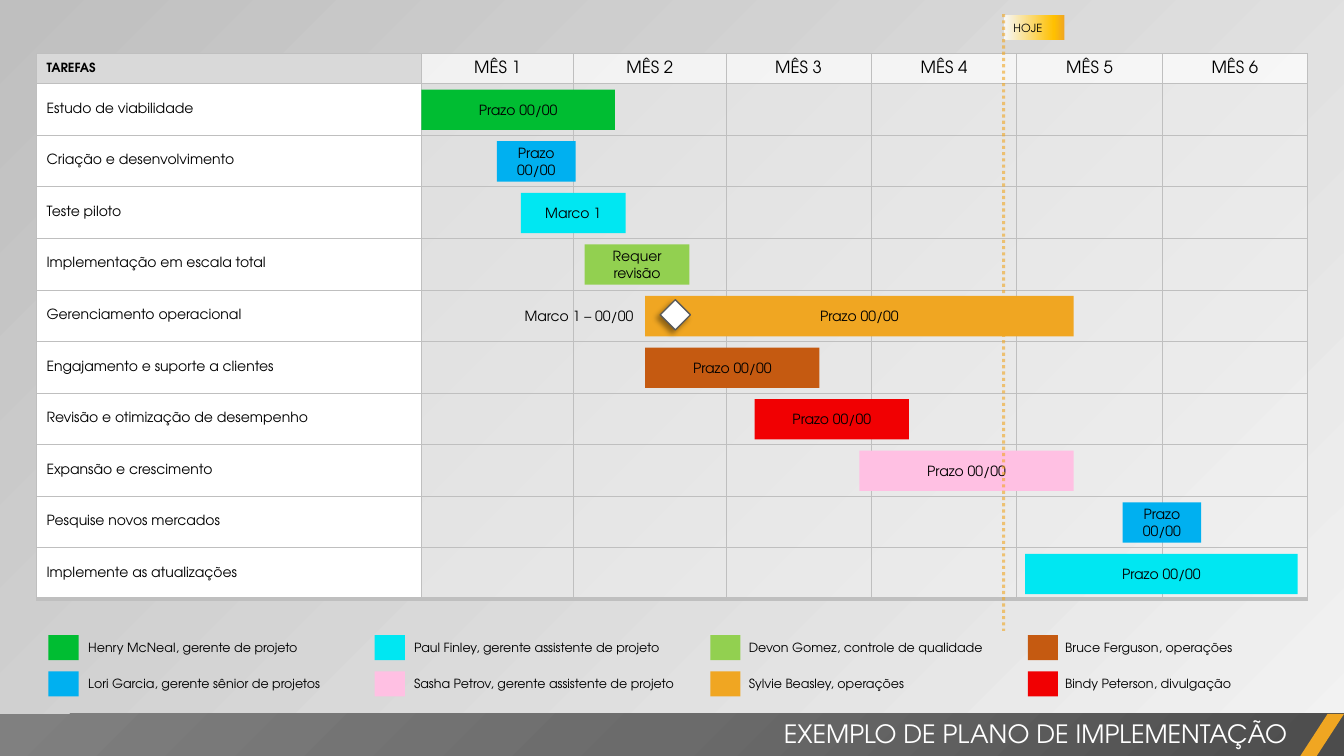
from dataclasses import dataclass

from lxml import etree
from pptx import Presentation, oxml, util as u
from pptx.dml.color import RGBColor
from pptx.enum import dml, shapes, text
from pptx.oxml import ns

COLORS = {
    "black": "000000", "white": "FFFFFF", "border": "BFBFBF", "header": "D9D9D9",
    "cell": "F2F2F2", "outline": "595959", "green": "00BD32", "blue": "00B0F0",
    "cyan": "00E7F2", "lime": "92D050", "amber": "F0A622", "brown": "C55A11",
    "red": "F10002", "pink": "FFC0E3", "gold": "FFC000", "pale": "F6F8FC",
    "dark": "4C4C4C", "middle": "6B6B6B", "light": "808080",
}
FONT = "TeX Gyre Adventor"
GRID_COLUMNS, GRID_ROWS = 80, 45
TABLE_LEFT, TABLE_TOP = 2.17, 3.18
TABLE_COLUMNS = [22.92, 9.06, 9.06] + [8.66] * 4
HEADER_HEIGHT, TASK_HEIGHT = 1.62, 3.07
FIRST_BAR_TOP, BAR_HEIGHT = 5.34, 2.4
LEGEND_TOP, LEGEND_PITCH, LEGEND_HEIGHT = 37.8, 2.16, 1.5
TODAY = 59.74
MIDDLE = text.MSO_ANCHOR.MIDDLE
LEFT, CENTER, RIGHT = text.PP_ALIGN.LEFT, text.PP_ALIGN.CENTER, text.PP_ALIGN.RIGHT
KIND = shapes.MSO_SHAPE

presentation = Presentation()
presentation.slide_width, presentation.slide_height = u.Inches(13.333), u.Inches(7.5)
slide = presentation.slides.add_slide(presentation.slide_layouts[6])


@dataclass
class Task:
    name: str
    start: float
    span: float
    label: str
    color: str


@dataclass
class LegendColumn:
    swatch: float
    label: float
    width: float
    people: list[tuple[str, str]]


TASKS = [
    Task("Estudo de viabilidade", 25.08, 11.52, "Prazo 00/00", "green"),
    Task("Criação e desenvolvimento", 29.58, 4.68, "Prazo 00/00", "blue"),
    Task("Teste piloto", 31, 6.24, "Marco 1", "cyan"),
    Task("Implementação em escala total", 34.8, 6.24, "Requer revisão", "lime"),
    Task("Gerenciamento operacional", 38.4, 25.5, "Prazo 00/00", "amber"),
    Task("Engajamento e suporte a clientes", 38.4, 10.38, "Prazo 00/00", "brown"),
    Task("Revisão e otimização de desempenho", 44.92, 9.18, "Prazo 00/00", "red"),
    Task("Expansão e crescimento", 51.15, 12.76, "Prazo 00/00", "pink"),
    Task("Pesquise novos mercados", 66.82, 4.68, "Prazo 00/00", "blue"),
    Task("Implemente as atualizações", 61.02, 16.22, "Prazo 00/00", "cyan"),
]
LEGEND = [
    LegendColumn(2.88, 4.66, 16.1, [("Henry McNeal, gerente de projeto", "green"),
                                    ("Lori Garcia, gerente sênior de projetos", "blue")]),
    LegendColumn(22.3, 24.06, 17.5, [("Paul Finley, gerente assistente de projeto", "cyan"),
                                     ("Sasha Petrov, gerente assistente de projeto", "pink")]),
    LegendColumn(42.28, 43.98, 16.9, [("Devon Gomez, controle de qualidade", "lime"),
                                      ("Sylvie Beasley, operações", "amber")]),
    LegendColumn(61.18, 62.82, 14.4, [("Bruce Ferguson, operações", "brown"),
                                      ("Bindy Peterson, divulgação", "red")]),
]


def across(columns: float) -> int:
    return round(presentation.slide_width * columns / GRID_COLUMNS)


def down(rows: float) -> int:
    return round(presentation.slide_height * rows / GRID_ROWS)


def box(left: float, top: float, width: float, height: float) -> tuple[int, int, int, int]:
    return across(left), down(top), across(width), down(height)


def rgb(color: str) -> RGBColor:
    return RGBColor.from_string(COLORS[color])


def set_opacity(parent, percent: int) -> None:
    color = next(parent.iter(ns.qn("a:srgbClr")))
    etree.SubElement(color, ns.qn("a:alpha"), val=str(percent * 1000))


def paint_gradient(fill, owner, stops: list[tuple[int, str, int]], direction: str) -> None:
    """Stops are position, colour and opacity; direction is the a:lin or a:path element."""
    fill.gradient()
    old = next(owner.iter(ns.qn("a:gradFill")))
    stop_xml = "".join(
        f'<a:gs pos="{position * 1000}"><a:srgbClr val="{COLORS[color]}">'
        f'<a:alpha val="{opacity * 1000}"/></a:srgbClr></a:gs>'
        for position, color, opacity in stops)
    old.getparent().replace(old, oxml.parse_xml(
        f'<a:gradFill {ns.nsdecls("a")} rotWithShape="1">'
        f'<a:gsLst>{stop_xml}</a:gsLst>{direction}</a:gradFill>'))


def write(frame, content: str, *, size: float = 10, color: str = "black",
          bold: bool = False, align=LEFT, anchor=None) -> None:
    frame.word_wrap = True
    if anchor is not None:
        frame.vertical_anchor = anchor
    paragraph = frame.paragraphs[0]
    paragraph.alignment = align
    run = paragraph.add_run()
    run.text = content
    run.font.name, run.font.size, run.font.bold = FONT, u.Pt(size), bold
    run.font.color.rgb = rgb(color)


def add_shape(place: tuple[int, int, int, int], color: str, kind=KIND.RECTANGLE, parent=slide):
    shape = parent.shapes.add_shape(kind, *place)
    shape.shadow.inherit = False
    shape.fill.solid()
    shape.fill.fore_color.rgb = rgb(color)
    shape.line.fill.background()
    return shape


def add_label(place: tuple[int, int, int, int], content: str, **formatting) -> None:
    write(slide.shapes.add_textbox(*place).text_frame, content, **formatting)


def style_cell(cell, color: str, opacity: int, bottom: float) -> None:
    cell.fill.solid()
    cell.fill.fore_color.rgb = rgb(color)
    properties = cell._tc.get_or_add_tcPr()
    if opacity < 100:
        set_opacity(properties, opacity)
    for index, (side, width) in enumerate(zip("LRTB", (0.5, 0.5, 0.5, bottom))):
        properties.insert(index, oxml.parse_xml(
            f'<a:ln{side} {ns.nsdecls("a")} w="{u.Pt(width)}"><a:solidFill>'
            f'<a:srgbClr val="{COLORS["border"]}"/></a:solidFill></a:ln{side}>'))


def add_schedule() -> None:
    height = HEADER_HEIGHT + TASK_HEIGHT * len(TASKS)
    table = slide.shapes.add_table(
        len(TASKS) + 1, len(TABLE_COLUMNS),
        *box(TABLE_LEFT, TABLE_TOP, sum(TABLE_COLUMNS), height)).table
    table.first_row = table.horz_banding = False
    for column, width in zip(table.columns, TABLE_COLUMNS):
        column.width = across(width)
    for index, row in enumerate(table.rows):
        row.height = down(TASK_HEIGHT if index else HEADER_HEIGHT)
        bottom = 3 if index == len(TASKS) else 0.5
        for month, cell in enumerate(row.cells):
            if index and month:
                style_cell(cell, "cell", 50, bottom)
                continue
            cell.vertical_anchor = MIDDLE
            if month:
                style_cell(cell, "white", 75, bottom)
                write(cell.text_frame, f"MÊS {month}", size=12, align=CENTER)
            elif index:
                style_cell(cell, "white", 100, bottom)
                write(cell.text_frame, TASKS[index - 1].name)
            else:
                style_cell(cell, "header", 100, bottom)
                write(cell.text_frame, "TAREFAS", size=9, bold=True)
    for index, task in enumerate(TASKS):
        bar = add_shape(box(task.start, FIRST_BAR_TOP + TASK_HEIGHT * index,
                            task.span, BAR_HEIGHT), task.color)
        write(bar.text_frame, task.label, align=CENTER, anchor=MIDDLE)


def add_legend() -> None:
    for column in LEGEND:
        for index, (person, color) in enumerate(column.people):
            top = LEGEND_TOP + LEGEND_PITCH * index
            add_shape(box(column.swatch, top, 1.8, LEGEND_HEIGHT), color)
            add_label(box(column.label, top, column.width, LEGEND_HEIGHT), person, size=9)


def add_today_marker() -> None:
    group = slide.shapes.add_group_shape()
    flag = add_shape(box(TODAY, 0.9, 3.62, 1.5), "amber", parent=group)
    paint_gradient(flag.fill, flag._element,
                   [(0, "pale", 100), (83, "gold", 100), (100, "amber", 100)],
                   '<a:lin ang="0" scaled="0"/>')
    write(flag.text_frame, "HOJE", size=8, anchor=MIDDLE)
    line = group.shapes.add_connector(shapes.MSO_CONNECTOR.STRAIGHT, across(TODAY),
                                      down(0.84), across(TODAY), down(37.56))
    line.line.color.rgb = rgb("amber")
    line.line.width = u.Pt(2.25)
    line.line.dash_style = dml.MSO_LINE.ROUND_DOT
    properties = line._element.spPr
    set_opacity(properties, 60)
    etree.SubElement(properties, ns.qn("a:effectLst"))


def add_milestone() -> None:
    diamond = add_shape(box(39.3, 17.84, 1.8, 1.8), "white", KIND.DIAMOND)
    diamond.line.color.rgb = rgb("outline")
    diamond.line.width = u.Pt(1)
    effects = next(diamond._element.iter(ns.qn("a:effectLst")))
    effects.append(oxml.parse_xml(
        f'<a:outerShdw {ns.nsdecls("a")} blurRad="{u.Pt(4)}" dist="{u.Pt(3)}" '
        f'dir="{135 * 60000}"><a:srgbClr val="{COLORS["black"]}">'
        '<a:alpha val="40000"/></a:srgbClr></a:outerShdw>'))
    add_label(box(25.26, FIRST_BAR_TOP + TASK_HEIGHT * 4, 13.02, BAR_HEIGHT),
              "Marco 1 – 00/00", align=RIGHT, anchor=MIDDLE)


def add_title_band() -> None:
    band = add_shape(box(0, 42.5, GRID_COLUMNS, 2.5), "middle")
    paint_gradient(band.fill, band._element,
                   [(0, "dark", 100), (50, "middle", 100), (100, "light", 100)],
                   '<a:path path="circle"><a:fillToRect l="100000" t="100000"/></a:path>')
    accent = add_shape(box(77.4, 42.5, 2.6, 2.5), "amber", KIND.PARALLELOGRAM)
    accent.adjustments[0] = 0.65
    add_label(box(31.5, 42.48, 45.72, 2.4), "EXEMPLO DE PLANO DE IMPLEMENTAÇÃO",
              size=18, color="white", align=RIGHT)


def main() -> None:
    paint_gradient(slide.background.fill, slide._element,
                   [(0, "cell", 40), (100, "border", 100)],
                   f'<a:lin ang="{225 * 60000}" scaled="0"/>')
    add_title_band()
    add_schedule()
    add_legend()
    add_today_marker()
    add_milestone()
    presentation.save("out.pptx")


if __name__ == "__main__":
    main()
